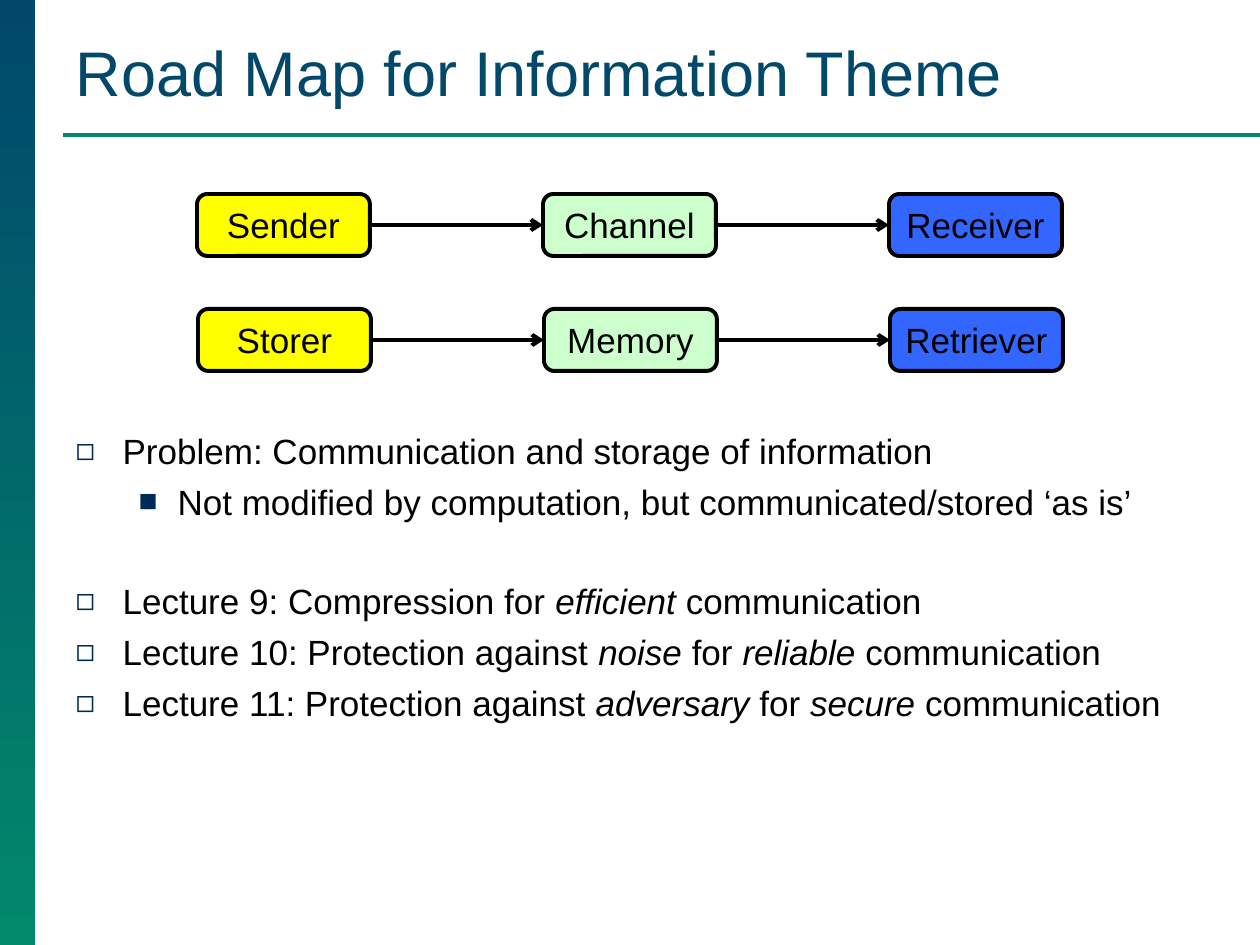
from lxml import etree
from pptx import Presentation
from pptx.dml.color import RGBColor
from pptx.enum import shapes, text
from pptx.oxml.ns import qn
from pptx.util import Pt

EMU_PER_PX = 914400 / 126
FONT = "Arial"
COLORS = {
    "navy": "01486B",
    "green": "02886B",
    "bullet": "002A58",
    "black": "000000",
    "yellow": "FFFF00",
    "mint": "CCFFCC",
    "blue": "3366FF",
}


def px(*values):
    return [round(v * EMU_PER_PX) for v in values]


def add_run(p, content, size, color, italic=False):
    r = p.add_run()
    r.text = content
    r.font.name = FONT
    r.font.size = Pt(size)
    r.font.italic = italic
    r.font.color.rgb = RGBColor.from_string(COLORS[color])


prs = Presentation()
prs.slide_width, prs.slide_height = px(1260, 945)
s = prs.slides.add_slide(prs.slide_layouts[1])

# Side band and title rule
band = s.shapes.add_shape(shapes.MSO_SHAPE.RECTANGLE, *px(0, 0, 35, 945))
band.shadow.inherit = False
band.line.fill.background()
band.fill.gradient()
band.fill.gradient_angle = 270
for stop, position, color in zip(band.fill.gradient_stops, (0, 1), ("navy", "green")):
    stop.position = position
    stop.color.rgb = RGBColor.from_string(COLORS[color])

rule = s.shapes.add_connector(shapes.MSO_CONNECTOR.STRAIGHT, *px(63, 135, 1260, 135))
rule.line.color.rgb = RGBColor.from_string(COLORS["green"])
rule.line.width = Pt(2.25)
etree.SubElement(rule._element.spPr, qn("a:effectLst"))

# Title
title = s.shapes.title
title.left, title.top, title.width, title.height = px(63, 26, 1169, 89)
tf = title.text_frame
tf.auto_size = text.MSO_AUTO_SIZE.NONE
tf.vertical_anchor = text.MSO_ANCHOR.BOTTOM
p = tf.paragraphs[0]
p.alignment = text.PP_ALIGN.LEFT
add_run(p, "Road Map for Information Theme", 36, "navy")

# Outline: level, space before in points, runs as (text, italic)
outline = [
    (0, 0, [("Problem: Communication and storage of information", False)]),
    (1, 5, [("Not modified by computation, but communicated/stored ‘as is’", False)]),
    (0, 33, [("Lecture 9: Compression for ", False), ("efficient", True),
             (" communication", False)]),
    (0, 5, [("Lecture 10: Protection against ", False), ("noise", True),
            (" for ", False), ("reliable", True), (" communication", False)]),
    (0, 5, [("Lecture 11: Protection against ", False), ("adversary", True),
            (" for ", False), ("secure", True), (" communication", False)]),
]
levels = [("◻", 47, -47), ("■", 102, -39)]  # bullet, margin, indent

body = s.placeholders[1]
body.left, body.top, body.width, body.height = px(63, 423, 1124, 446)
tf = body.text_frame
tf.auto_size = text.MSO_AUTO_SIZE.NONE
for i, (level, space, runs) in enumerate(outline):
    p = tf.add_paragraph() if i else tf.paragraphs[0]
    p.level = level
    bullet, margin, indent = levels[level]
    pPr = p._p.get_or_add_pPr()
    for name, value in zip(("marL", "indent"), px(margin, indent)):
        pPr.set(name, str(value))
    bullet_color = etree.SubElement(pPr, qn("a:buClr"))
    etree.SubElement(bullet_color, qn("a:srgbClr"), val=COLORS["bullet"])
    etree.SubElement(pPr, qn("a:buSzPct"), val="90000")
    etree.SubElement(pPr, qn("a:buFont"), typeface=FONT)
    etree.SubElement(pPr, qn("a:buChar"), char=bullet)
    p.space_before = Pt(space)
    for content, italic in runs:
        add_run(p, content, 20, "black", italic)

# Two flows of three boxes, joined by arrows
flows = [
    (197, 194, ["Sender", "Channel", "Receiver"]),
    (198, 309, ["Storer", "Memory", "Retriever"]),
]
for left, top, labels in flows:
    boxes = []
    for col, (label, fill) in enumerate(zip(labels, ("yellow", "mint", "blue"))):
        box = s.shapes.add_shape(shapes.MSO_SHAPE.ROUNDED_RECTANGLE,
                                 *px(left + 346 * col, top, 173, 62))
        box.shadow.inherit = False
        box.fill.solid()
        box.fill.fore_color.rgb = RGBColor.from_string(COLORS[fill])
        box.line.color.rgb = RGBColor.from_string(COLORS["black"])
        box.line.width = Pt(2.25)
        tf = box.text_frame
        tf.word_wrap = False
        tf.vertical_anchor = text.MSO_ANCHOR.MIDDLE
        p = tf.paragraphs[0]
        p.alignment = text.PP_ALIGN.CENTER
        add_run(p, label, 20, "black")
        boxes.append(box)

    for source, target in zip(boxes, boxes[1:]):
        arrow = s.shapes.add_connector(shapes.MSO_CONNECTOR.STRAIGHT, 0, 0, 0, 0)
        arrow.begin_connect(source, 3)
        arrow.end_connect(target, 1)
        arrow.line.color.rgb = RGBColor.from_string(COLORS["black"])
        arrow.line.width = Pt(2.25)
        etree.SubElement(arrow.line._get_or_add_ln(), qn("a:tailEnd"), type="arrow")
        etree.SubElement(arrow._element.spPr, qn("a:effectLst"))

prs.save("out.pptx")
